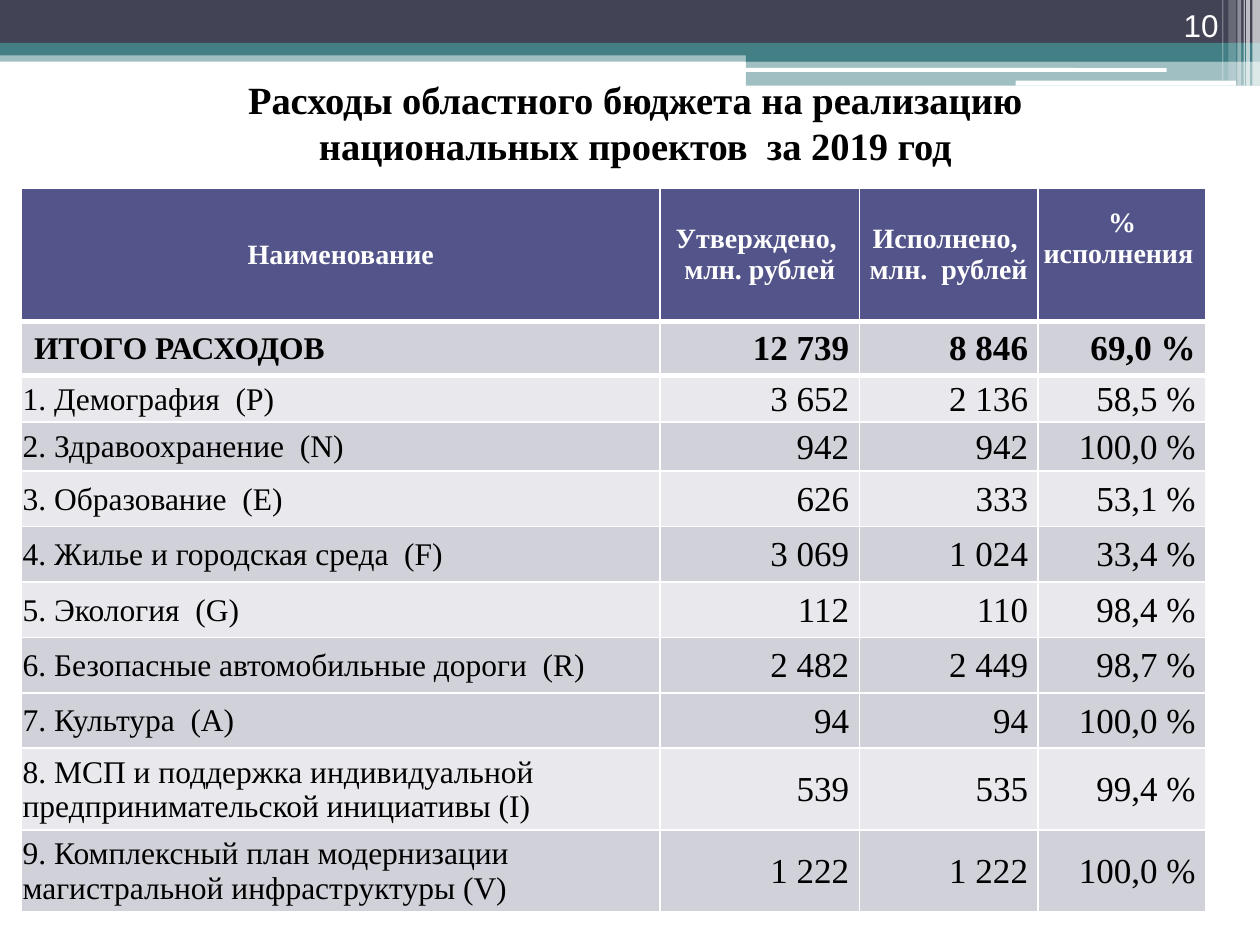
from lxml import etree
from pptx import Presentation
from pptx.dml.color import RGBColor
from pptx.enum import shapes, text
from pptx.oxml import ns
from pptx.util import Inches, Pt

SERIF = "Times New Roman"
WHITE, BLACK, INDIGO = "FFFFFF", "000000", "53548A"
SLATE, TEAL = "424456", "438086"
DARK_ROW, LIGHT_ROW = "D1D1DA", "E9E9ED"
LIGHT_ROWS = {2, 4, 6, 9}
COLUMN_WIDTHS = [5.07, 1.58, 1.42, 1.33]
ROW_HEIGHTS = [1.06, 0.43, 0.37, 0.39] + [0.44] * 5 + [0.65] * 2
EXPENSES = [
    ("Наименование", "Утверждено, \nмлн. рублей", "Исполнено, \nмлн.  рублей", "% исполнения "),
    ("ИТОГО РАСХОДОВ", "12 739", "8 846", "69,0 %"),
    ("1. Демография  (P)", "3 652", "2 136", "58,5 %"),
    ("2. Здравоохранение  (N)", "942", "942", "100,0 %"),
    ("3. Образование  (E)", "626", "333", "53,1 %"),
    ("4. Жилье и городская среда  (F)", "3 069", "1 024", "33,4 %"),
    ("5. Экология  (G)", "112", "110", "98,4 %"),
    ("6. Безопасные автомобильные дороги  (R)", "2 482", "2 449", "98,7 %"),
    ("7. Культура  (A)", "94", "94", "100,0 %"),
    ("8. МСП и поддержка индивидуальной предпринимательской инициативы (I)", "539", "535", "99,4 %"),
    ("9. Комплексный план модернизации магистральной инфраструктуры (V)", "1 222", "1 222", "100,0 %"),
]


def color(value):
    """Turn a hex string into a colour."""
    return RGBColor.from_string(value)


def write(frame, wording, size, ink, align, font=SERIF, bold=False):
    """Put wording into a text frame and format every run."""
    frame.text = wording
    frame.word_wrap = True
    for paragraph in frame.paragraphs:
        paragraph.alignment = align
        for run in paragraph.runs:
            run.font.name, run.font.size, run.font.bold = font, Pt(size), bold
            run.font.color.rgb = color(ink)


def add_bar(slide, left, top, width, height, fill, opacity=100, rounded=False):
    """Add one plain bar, optionally translucent or rounded."""
    preset = shapes.MSO_SHAPE.ROUNDED_RECTANGLE if rounded else shapes.MSO_SHAPE.RECTANGLE
    bar = slide.shapes.add_shape(preset, Inches(left), Inches(top), Inches(width), Inches(height))
    bar.shadow.inherit = False
    bar.line.fill.background()
    bar.fill.solid()
    bar.fill.fore_color.rgb = color(fill)
    if opacity < 100:
        tint = bar.fill._xPr.find(".//" + ns.qn("a:srgbClr"))
        etree.SubElement(tint, ns.qn("a:alpha"), val=str(opacity * 1000))


def add_banner(slide, left, top, width):
    """Draw the layered band with its stripes at the right edge."""
    step, right = left + 5.92, left + width
    add_bar(slide, left, top + 0.4, width, 0.09, TEAL, 50)
    add_bar(slide, left, top, width, 0.34, SLATE)
    add_bar(slide, left, top + 0.34, width, 0.1, TEAL)
    add_bar(slide, step, top + 0.39, right - step, 0.1, TEAL)
    add_bar(slide, step, top + 0.48, right - step, 0.2, TEAL, 50)
    add_bar(slide, step - 0.01, top + 0.54, 3.35, 0.03, WHITE, rounded=True)
    add_bar(slide, left + 8.06, top + 0.64, 1.75, 0.04, WHITE, rounded=True)
    stripes = [(0.06, 0.06, 0.68, 65), (0.11, 0.03, 0.68, 65), (0.13, 0.01, 0.68, 60),
               (0.18, 0.03, 0.68, 40), (0.25, 0.06, 0.64, 20), (0.3, 0.01, 0.64, 30)]
    for offset, thickness, height, opacity in stripes:
        add_bar(slide, right - offset, top, thickness, height, WHITE, opacity)


def place_title(slide, left, top, width, height):
    """Move and format the title placeholder."""
    title = slide.shapes.title
    title.left, title.top, title.width, title.height = map(Inches, (left, top, width, height))
    write(title.text_frame,
          "Расходы областного бюджета на реализацию \nнациональных проектов  за 2019 год ",
          22, BLACK, text.PP_ALIGN.CENTER, bold=True)
    title.text_frame.auto_size = text.MSO_AUTO_SIZE.NONE
    title.text_frame.vertical_anchor = text.MSO_ANCHOR.TOP


def set_borders(cell, top, bottom):
    """Give a cell white borders, with its own top and bottom weights."""
    properties = cell._tc.get_or_add_tcPr()
    for index, (side, weight) in enumerate(zip("LRTB", (1, 1, top, bottom))):
        line = etree.Element(ns.qn(f"a:ln{side}"), w=str(Pt(weight)))
        fill = etree.SubElement(line, ns.qn("a:solidFill"))
        etree.SubElement(fill, ns.qn("a:srgbClr"), val=WHITE)
        properties.insert(index, line)


def cell_margins(row, column):
    """Return the left, top, right and bottom margins of a cell."""
    if column == 0:
        return (0.1, 0.05, 0.1, 0.05) if row < 2 else (0.01, 0.01, 0.01, 0)
    if row == 0:
        return (0.02, 0.04, 0.02, 0.29 if column == 3 else 0.04)
    return (0.01, 0.01, 0.08, 0)


def format_cell(cell, row, column, wording):
    """Fill in one cell according to its row and column."""
    header = row == 0
    if header:
        size, align = 16, text.PP_ALIGN.CENTER
    elif column == 0:
        size, align = 18, text.PP_ALIGN.LEFT
    else:
        size, align = 20, text.PP_ALIGN.RIGHT
    write(cell.text_frame, wording, size, WHITE if header else BLACK, align, bold=row < 2)
    cell.vertical_anchor = text.MSO_ANCHOR.MIDDLE
    margins = map(Inches, cell_margins(row, column))
    cell.margin_left, cell.margin_top, cell.margin_right, cell.margin_bottom = margins
    cell.fill.solid()
    body_fill = LIGHT_ROW if row in LIGHT_ROWS else DARK_ROW
    cell.fill.fore_color.rgb = color(INDIGO if header else body_fill)
    set_borders(cell, 3 if row in (1, 2) else 1, 3 if row < 2 else 1)


def add_expenses(slide, left, top, width, height):
    """Add the table of national project expenses."""
    table = slide.shapes.add_table(len(EXPENSES), len(COLUMN_WIDTHS), Inches(left), Inches(top),
                                   Inches(width), Inches(height)).table
    for column, column_width in zip(table.columns, COLUMN_WIDTHS):
        column.width = Inches(column_width)
    for row, (row_height, entries) in enumerate(zip(ROW_HEIGHTS, EXPENSES)):
        table.rows[row].height = Inches(row_height)
        for column, wording in enumerate(entries):
            format_cell(table.cell(row, column), row, column, wording)


def add_page_number(slide, left, top, width, height):
    """Add the page number in the banner."""
    number = slide.shapes.add_textbox(Inches(left), Inches(top), Inches(width), Inches(height))
    write(number.text_frame, "10", 18, WHITE, text.PP_ALIGN.RIGHT, font="Arial")
    number.text_frame.vertical_anchor = text.MSO_ANCHOR.BOTTOM


def main():
    """Build and save the slide."""
    deck = Presentation()
    deck.slide_width, deck.slide_height = Inches(10), Inches(7.5)
    slide = deck.slides.add_slide(deck.slide_layouts[5])
    add_banner(slide, 0, 0, 10)
    place_title(slide, 0, 0.55, 10.16, 0.84)
    add_expenses(slide, 0.17, 1.49, sum(COLUMN_WIDTHS), sum(ROW_HEIGHTS))
    add_page_number(slide, 8.94, 0, 0.83, 0.4)
    deck.save("out.pptx")


if __name__ == "__main__":
    main()
